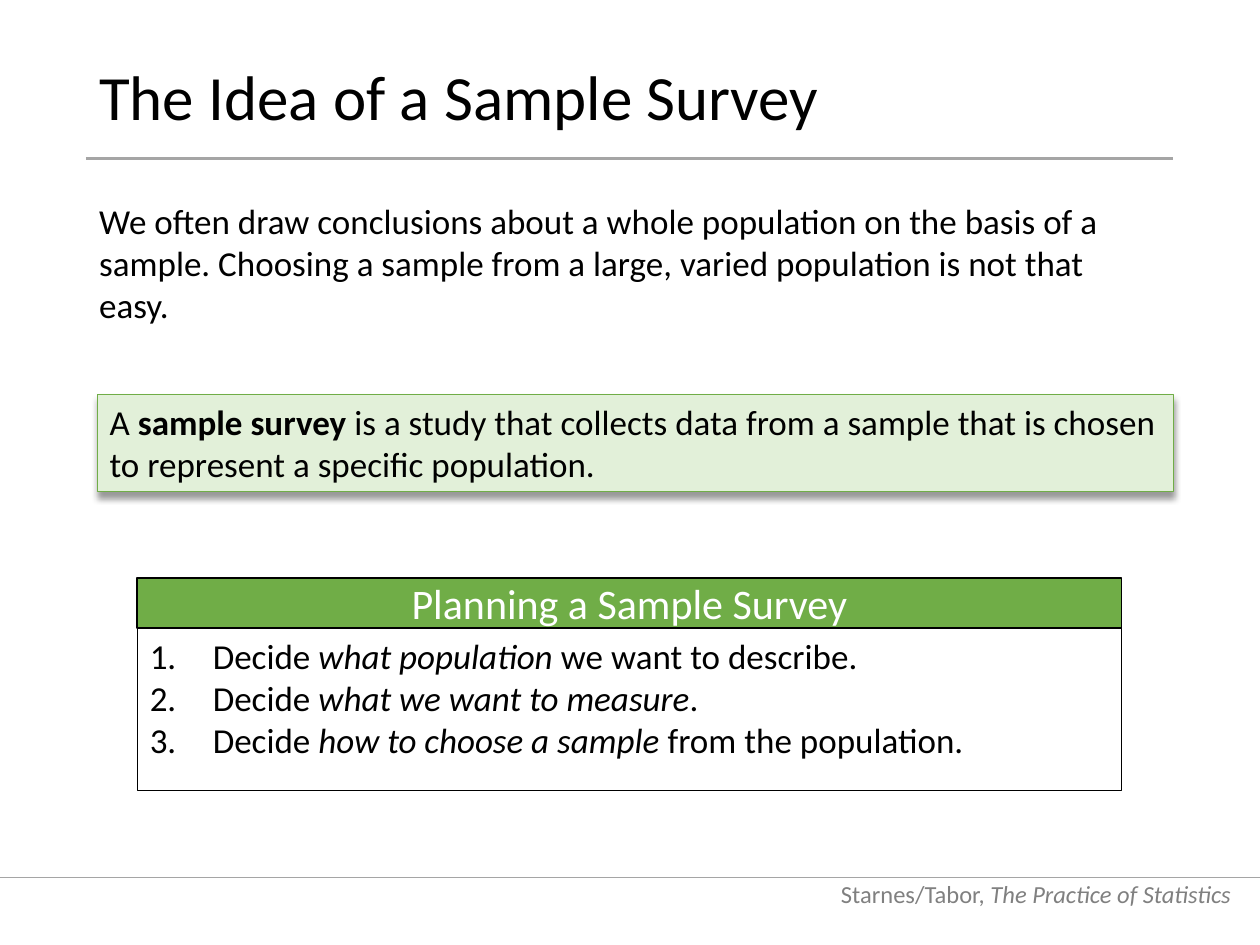
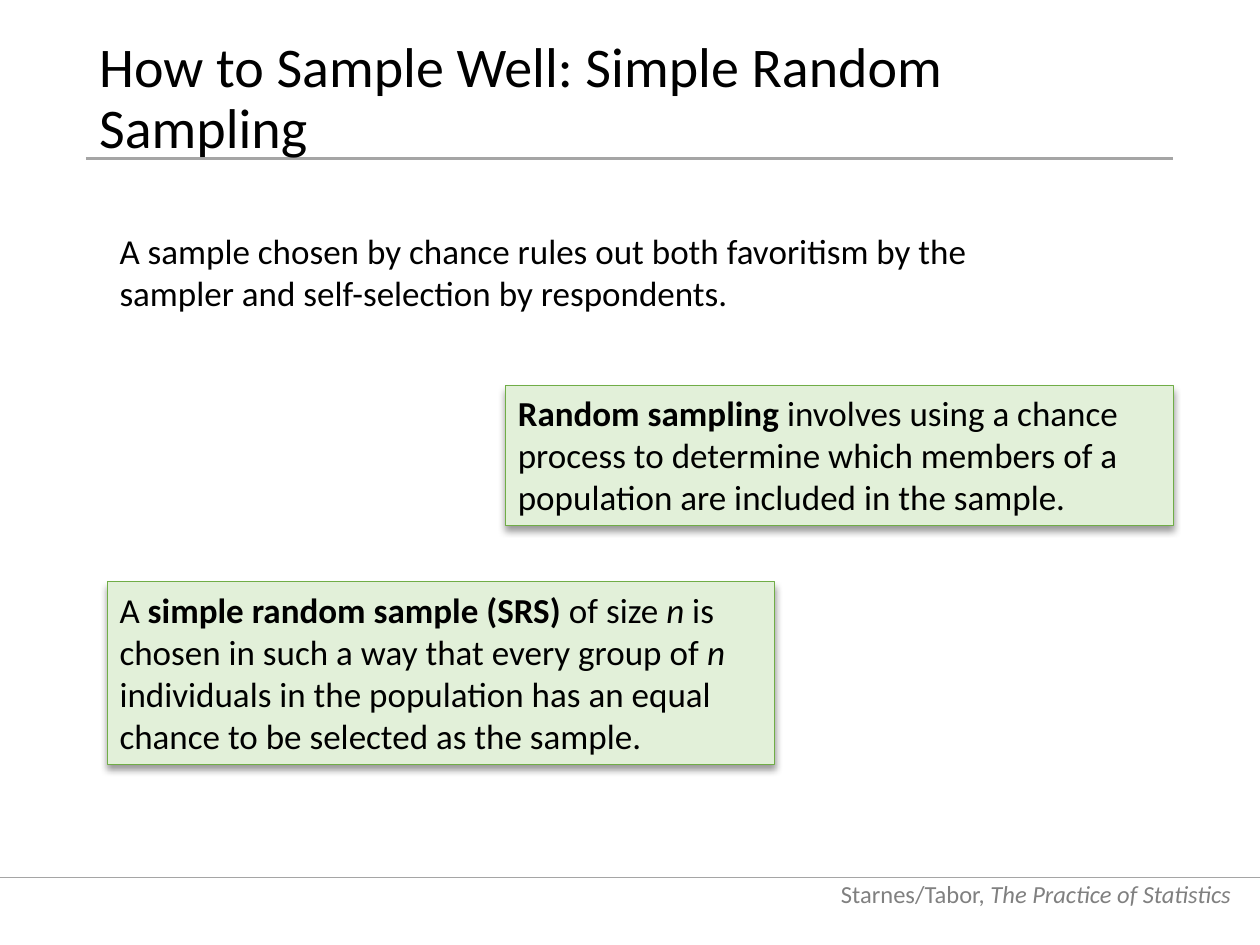
"""Build two slides on sample surveys and simple random sampling."""
from lxml import etree
from pptx import Presentation
from pptx import util as u
from pptx.dml.color import RGBColor
from pptx.enum import shapes, text
from pptx.oxml import ns

BLACK = RGBColor(0x00, 0x00, 0x00)
WHITE = RGBColor(0xFF, 0xFF, 0xFF)
GREEN = RGBColor(0x70, 0xAD, 0x47)
PALE_GREEN = RGBColor(0xE2, 0xF0, 0xD9)
RULE_GRAY = RGBColor(0xA5, 0xA5, 0xA5)
FOOTER_GRAY = RGBColor(0x80, 0x80, 0x80)


class Deck:
    """Hold the style and the current slide."""

    font = "Calibri"
    body_size = 20

    def __init__(self):
        self.presentation = Presentation()
        self.presentation.slide_width = u.Cm(25.4)
        self.presentation.slide_height = u.Cm(19.05)
        self.slide = None

    def add_slide(self, title, title_size):
        """Start a slide with its footer, rules and title."""
        self.slide = self.presentation.slides.add_slide(self.presentation.slide_layouts[6])
        self.text_box((16.43, 17.42, 8.64, 1.02),
                      [("Starnes/Tabor,", ""), (" The Practice of Statistics", "i")],
                      size=14, color=FOOTER_GRAY, align=text.PP_ALIGN.RIGHT,
                      anchor=text.MSO_ANCHOR.BOTTOM)
        self.rule(0, 25.4, 17.68, 0.5)
        self.rule(1.73, 23.65, 3.2, 1.5)
        self.text_box((1.75, 1.02, 21.89, 1.98), [(title, "")], size=title_size,
                      anchor=text.MSO_ANCHOR.MIDDLE, line_spacing=0.9)

    def rule(self, left, right, top, width):
        """Draw a horizontal gray line."""
        line = self.slide.shapes.add_connector(
            shapes.MSO_CONNECTOR.STRAIGHT, u.Cm(left), u.Cm(top), u.Cm(right), u.Cm(top))
        line.line.color.rgb = RULE_GRAY
        line.line.width = u.Pt(width)
        etree.SubElement(line._element.spPr, ns.qn("a:effectLst"))

    def fill_text(self, shape, paragraphs, size=body_size, color=BLACK,
                  align=text.PP_ALIGN.LEFT, anchor=text.MSO_ANCHOR.TOP,
                  line_spacing=None, numbered=False, grow=False):
        """Fill a shape with paragraphs made of (words, style) runs."""
        frame = shape.text_frame
        frame.word_wrap = True
        frame.vertical_anchor = anchor
        frame.auto_size = text.MSO_AUTO_SIZE.SHAPE_TO_FIT_TEXT if grow else text.MSO_AUTO_SIZE.NONE
        for index, runs in enumerate(paragraphs):
            paragraph = frame.add_paragraph() if index else frame.paragraphs[0]
            paragraph.alignment = align
            if line_spacing:
                paragraph.line_spacing = line_spacing
            if numbered:
                self.number(paragraph)
            paragraph.font.name = self.font
            paragraph.font.size = u.Pt(size)
            paragraph.font.color.rgb = color
            for words, style in runs:
                run = paragraph.add_run()
                run.text = words
                if style == "b":
                    run.font.bold = True
                elif style == "i":
                    run.font.italic = True

    def number(self, paragraph):
        """Give a paragraph an automatic number and a hanging indent."""
        properties = paragraph._p.get_or_add_pPr()
        properties.set("marL", str(u.Cm(1.27)))
        properties.set("indent", str(u.Cm(-1.27)))
        etree.SubElement(properties, ns.qn("a:buFont"), typeface="+mj-lt")
        etree.SubElement(properties, ns.qn("a:buAutoNum"), type="arabicPeriod")

    def text_box(self, place, runs, **style):
        """Add one paragraph of plain text."""
        box = self.slide.shapes.add_textbox(*map(u.Cm, place))
        self.fill_text(box, [runs], **style)

    def rectangle(self, place, paragraphs, fill, line, line_width, **style):
        """Add a rectangle with text and return it."""
        shape = self.slide.shapes.add_shape(shapes.MSO_SHAPE.RECTANGLE, *map(u.Cm, place))
        shape.shadow.inherit = False
        if fill is None:
            shape.fill.background()
        else:
            shape.fill.solid()
            shape.fill.fore_color.rgb = fill
        shape.line.color.rgb = line
        shape.line.width = u.Pt(line_width)
        self.fill_text(shape, paragraphs, **style)
        return shape

    def definition(self, place, runs):
        """Add a shadowed green box that defines a term."""
        box = self.rectangle(place, [runs], PALE_GREEN, GREEN, 0.5, grow=True)
        effects = box._element.spPr.find(ns.qn("a:effectLst"))
        shadow = etree.SubElement(effects, ns.qn("a:outerShdw"), blurRad=str(u.Pt(4)),
                                  dist=str(u.Pt(3)), dir="5400000", rotWithShape="0")
        color = etree.SubElement(shadow, ns.qn("a:srgbClr"), val=str(BLACK))
        etree.SubElement(color, ns.qn("a:alpha"), val="40000")

    def steps_panel(self, left, top, width, header_height, body_height, heading, steps):
        """Add a headed panel of numbered steps."""
        header = self.rectangle((left, top, width, header_height), [[(heading, "")]],
                                GREEN, BLACK, 1, size=24, color=WHITE,
                                align=text.PP_ALIGN.CENTER, anchor=text.MSO_ANCHOR.MIDDLE)
        body = self.rectangle((left, top + header_height, width, body_height), steps,
                              None, BLACK, 0.75, numbered=True)
        self.slide.shapes.add_group_shape([header, body])


def main():
    """Build both slides and save them."""
    deck = Deck()

    deck.add_slide("The Idea of a Sample Survey", 36)
    deck.text_box((1.75, 3.89, 21.89, 2.82), [
        ("We often draw conclusions about a whole population on the basis of a sample. "
         "Choosing a sample from a large, varied population is not that easy.", "")], grow=True)
    deck.definition((1.96, 7.95, 21.69, 1.96), [
        ("A ", ""), ("sample survey ", "b"),
        ("is a study that collects data from a sample that is chosen to represent "
         "a specific population.", "")])
    deck.steps_panel(2.77, 11.66, 19.84, 1, 3.28, "Planning a Sample Survey", [
        [("Decide ", ""), ("what population ", "i"), ("we want to describe.", "")],
        [("Decide ", ""), ("what we want to measure", "i"), (".", "")],
        [("Decide ", ""), ("how to choose a sample ", "i"), ("from the population.", "")]])

    deck.add_slide("How to Sample Well: Simple Random Sampling", 32)
    deck.text_box((2.16, 4.5, 19.96, 2.82), [
        ("A sample chosen by chance rules out both favoritism by the sampler and "
         "self-selection by respondents.", "")], grow=True)
    deck.definition((10.19, 7.77, 13.46, 2.82), [
        ("Random sampling ", "b"),
        ("involves using a chance process to determine which members of a population "
         "are included in the sample.", "")])
    deck.definition((2.16, 11.73, 13.46, 3.68), [
        ("A ", ""), ("simple random sample (SRS)", "b"), (" of size ", ""), ("n", "i"),
        (" is chosen in such a way that every group of ", ""), ("n", "i"),
        (" individuals in the population has an equal chance to be selected as the sample.", "")])

    deck.presentation.save("out.pptx")


if __name__ == "__main__":
    main()
